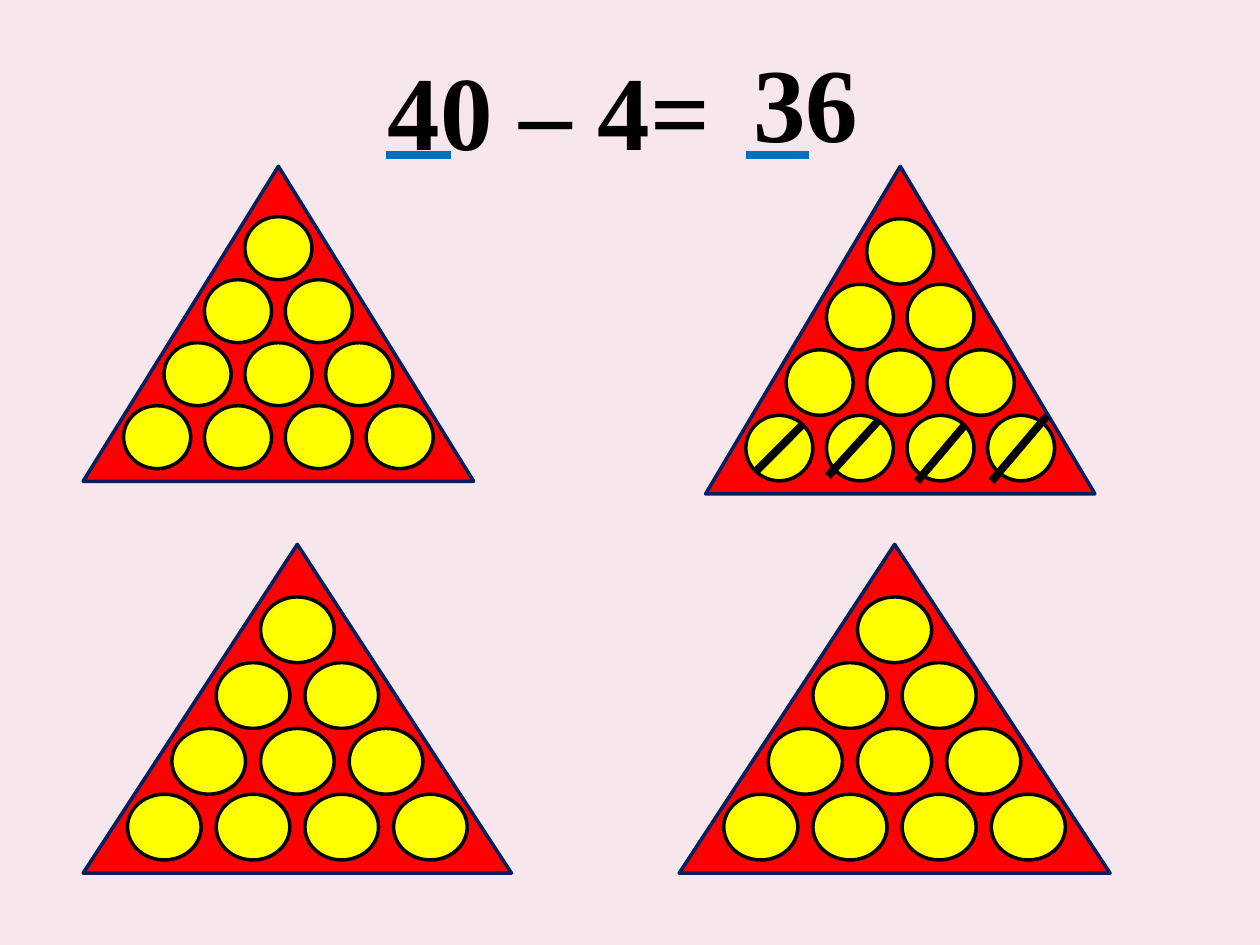
from lxml import etree
from pptx import Presentation
from pptx.dml.color import RGBColor
from pptx.enum.shapes import MSO_CONNECTOR, MSO_SHAPE
from pptx.enum.text import MSO_ANCHOR, PP_ALIGN
from pptx.oxml.ns import qn
from pptx.util import Inches, Pt

TRIANGLE, OVAL = MSO_SHAPE.ISOSCELES_TRIANGLE, MSO_SHAPE.OVAL
STRAIGHT = MSO_CONNECTOR.STRAIGHT
TOP, MIDDLE = MSO_ANCHOR.TOP, MSO_ANCHOR.MIDDLE
LEFT, CENTER = PP_ALIGN.LEFT, PP_ALIGN.CENTER

PINK = RGBColor(0xF7, 0xE7, 0xED)
RED = RGBColor(0xFF, 0x00, 0x00)
YELLOW = RGBColor(0xFF, 0xFF, 0x00)
NAVY = RGBColor(0x00, 0x20, 0x60)
BLUE = RGBColor(0x00, 0x70, 0xC0)
BLACK = RGBColor(0x00, 0x00, 0x00)


class CountingSlide:
    """Holds the style and the slide being drawn."""

    font = {"name": "Times New Roman", "size": Pt(60), "bold": True}
    outline = Pt(2)
    stroke = Pt(4.5)
    rows = 4
    # Shares of the triangle's width or height
    dot_width, dot_pitch = 0.172, 0.207
    dot_height, first_row = 0.2, 0.16

    def __init__(self, slide):
        self.slide = slide
        slide.background.fill.solid()
        slide.background.fill.fore_color.rgb = PINK

    def text(self, words, left, top, width, height, align, anchor):
        box = self.slide.shapes.add_textbox(
            Inches(left), Inches(top), Inches(width), Inches(height))
        frame = box.text_frame
        frame.word_wrap = True
        frame.vertical_anchor = anchor
        paragraph = frame.paragraphs[0]
        paragraph.alignment = align
        run = paragraph.add_run()
        run.text = words
        for name, value in self.font.items():
            setattr(run.font, name, value)
        run.font.color.rgb = BLACK

    def shape(self, group, kind, left, top, width, height, fill, line):
        shape = group.shapes.add_shape(
            kind, Inches(left), Inches(top), Inches(width), Inches(height))
        shape.shadow.inherit = False
        shape.fill.solid()
        shape.fill.fore_color.rgb = fill
        shape.line.color.rgb = line
        shape.line.width = self.outline

    def ten(self, left, top, width, height):
        """A triangle with ten dots in rows of one to four."""
        group = self.slide.shapes.add_group_shape()
        self.shape(group, TRIANGLE, left, top, width, height, RED, NAVY)
        dot_w, dot_h = self.dot_width * width, self.dot_height * height
        pitch = self.dot_pitch * width
        for row in range(self.rows):
            first = left + (width - dot_w - row * pitch) / 2
            dot_top = top + self.first_row * height + row * dot_h
            for column in range(row + 1):
                self.shape(group, OVAL, first + column * pitch, dot_top,
                           dot_w, dot_h, YELLOW, BLACK)

    def line(self, x1, y1, x2, y2, color):
        line = self.slide.shapes.add_connector(
            STRAIGHT, Inches(x1), Inches(y1), Inches(x2), Inches(y2))
        line.line.color.rgb = color
        line.line.width = self.stroke
        etree.SubElement(line._element.spPr, qn("a:effectLst"))


def main():
    prs = Presentation()
    prs.slide_width, prs.slide_height = Inches(10), Inches(7.5)
    page = CountingSlide(prs.slides.add_slide(prs.slide_layouts[6]))

    # Equation
    page.text("40 – 4=", 2.98, 0.31, 2.96, 1.11, LEFT, TOP)

    # Four tens
    for ten in ((5.6, 1.32, 3.09, 2.6), (5.39, 4.32, 3.42, 2.61),
                (0.66, 4.32, 3.4, 2.61), (0.66, 1.32, 3.1, 2.5)):
        page.ten(*ten)

    # Answer
    page.text("36", 5.7, 0.34, 1.39, 0.92, CENTER, MIDDLE)

    # Strokes through the four dots taken away
    for stroke in ((7.87, 3.82, 8.31, 3.3), (7.28, 3.82, 7.66, 3.37),
                   (6.57, 3.78, 6.98, 3.33), (6, 3.74, 6.37, 3.37)):
        page.line(*stroke, BLACK)

    # Underlines of the tens digits
    for start, end in ((3.06, 3.58), (5.92, 6.42)):
        page.line(start, 1.23, end, 1.23, BLUE)

    prs.save("out.pptx")


if __name__ == "__main__":
    main()
